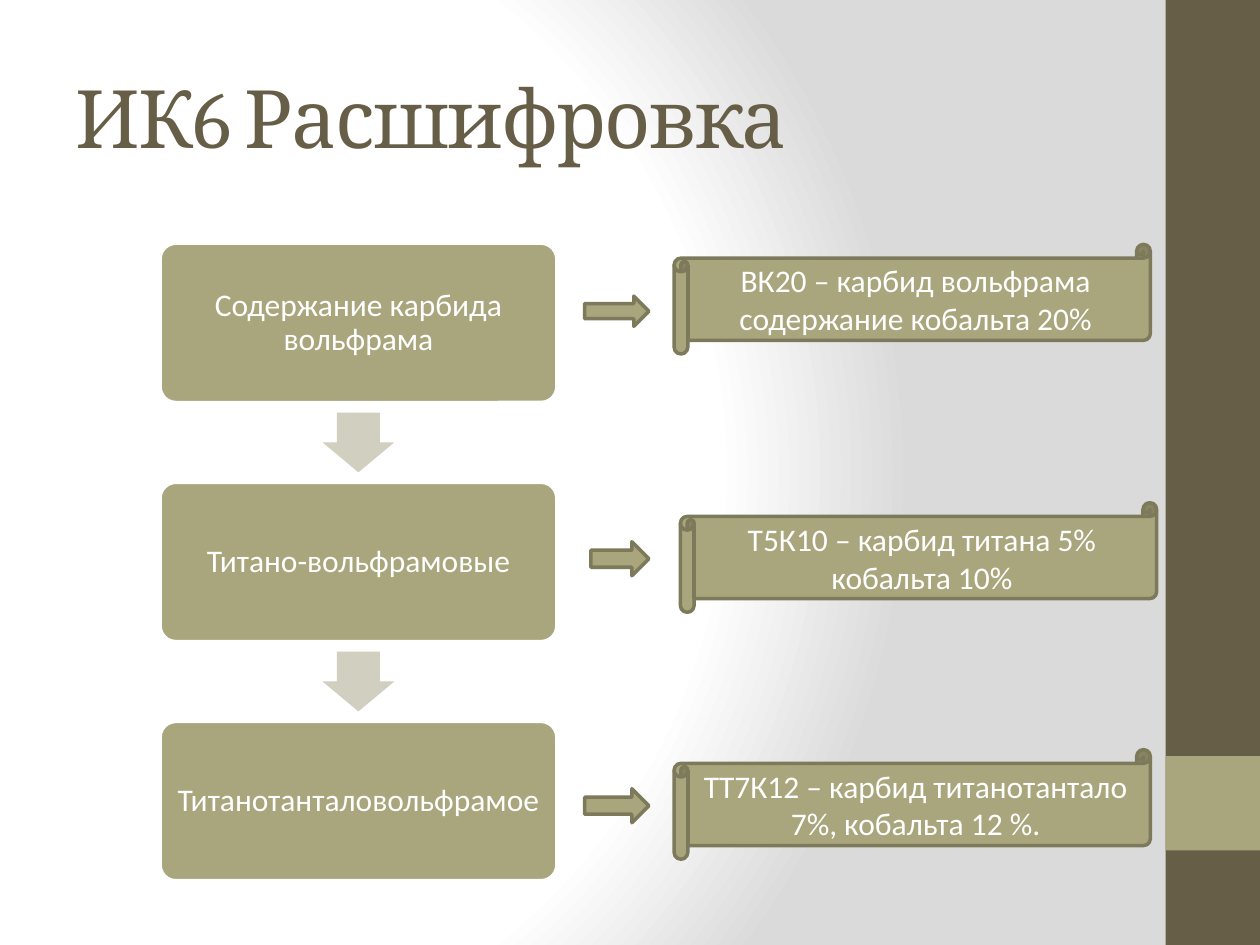
import pptx
import pptx.dml.color
import pptx.enum.shapes
import pptx.enum.text
import pptx.oxml
import pptx.oxml.ns
import pptx.util

Inches = pptx.util.Inches
Pt = pptx.util.Pt
SHAPE = pptx.enum.shapes.MSO_SHAPE
ALIGN = pptx.enum.text.PP_ALIGN
MIDDLE = pptx.enum.text.MSO_ANCHOR.MIDDLE

WIDTH, HEIGHT = 10, 7.5
COLORS = {
    "brown": "675E47", "olive": "A9A57C", "olive_edge": "7D7A5C",
    "pale": "D1CFBF", "white": "FFFFFF", "grey": "DADADA",
}
GRADES = ["Содержание карбида вольфрама", "Титано-вольфрамовые", "Титанотанталовольфрамое"]
# scroll text, scroll (left, top), arrow (left, top, width, height)
EXAMPLES = [
    ("ВК20 – карбид вольфрама содержание кобальта 20%", (5.35, 1.94), (4.64, 2.35, 0.51, 0.24)),
    ("Т5К10 – карбид титана 5% кобальта 10%", (5.4, 3.99), (4.69, 4.3, 0.46, 0.27)),
    ("ТТ7К12 – карбид титанотантало 7%, кобальта 12 %.", (5.35, 5.95), (4.64, 6.26, 0.51, 0.27)),
]


def rgb(name):
    return pptx.dml.color.RGBColor.from_string(COLORS[name])


def add_block(page, kind, box, fill, line=None):
    shape = page.shapes.add_shape(kind, *map(Inches, box))
    shape.shadow.inherit = False
    shape.fill.solid()
    shape.fill.fore_color.rgb = rgb(fill)
    if line:
        shape.line.color.rgb = rgb(line)
        shape.line.width = Pt(2)
    else:
        shape.line.fill.background()
    return shape


def add_run(para, text, font, size, color):
    span = para.add_run()
    span.text = text
    span.font.name = font
    span.font.size = Pt(size)
    span.font.color.rgb = rgb(color)
    return span


def write_label(shape, text):
    frame = shape.text_frame
    frame.word_wrap = True
    frame.vertical_anchor = MIDDLE
    para = frame.paragraphs[0]
    para.alignment = ALIGN.CENTER
    add_run(para, text, "Calibri", 18, "white")
    return frame


def paint_background(page):
    """Radial gradient, which python-pptx offers only through XML."""
    stops = [(0, "white"), (75, "white"), (100, "grey")]
    stop_xml = "".join(
        f'<a:gs pos="{share * 1000}"><a:srgbClr val="{COLORS[name]}"/></a:gs>'
        for share, name in stops)
    background = pptx.oxml.parse_xml(
        f'<p:bg {pptx.oxml.ns.nsdecls("p", "a")}><p:bgPr><a:gradFill rotWithShape="1">'
        f'<a:gsLst>{stop_xml}</a:gsLst><a:path path="circle">'
        '<a:fillToRect l="20000" t="50000" r="100000" b="50000"/></a:path>'
        '</a:gradFill><a:effectLst/></p:bgPr></p:bg>')
    page._element.cSld.insert(0, background)


def draw_sidebar(page, box):
    left, top, width, height = box
    add_block(page, SHAPE.RECTANGLE, box, "brown")
    add_block(page, SHAPE.RECTANGLE, (left, top + 0.8 * height, width, width), "olive")


def write_title(page, box, text):
    title = page.shapes.title
    title.left, title.top, title.width, title.height = map(Inches, box)
    title.text_frame.vertical_anchor = MIDDLE
    para = title.text_frame.paragraphs[0]
    para.alignment = ALIGN.LEFT
    span = add_run(para, text, "Cambria", 46, "brown")
    span.font._element.set("spc", "-100")


def draw_process(page, box, steps):
    """Equal boxes stacked in a column, with a down arrow in each gap."""
    left, top, width, height = box
    gap_share = 0.5
    step_height = height / (len(steps) + gap_share * (len(steps) - 1))
    gap = gap_share * step_height
    arrow_width, arrow_height = 0.9 * gap, 0.75 * gap
    for index, text in enumerate(steps):
        step_top = top + index * (step_height + gap)
        step = add_block(page, SHAPE.ROUNDED_RECTANGLE,
                         (left, step_top, width, step_height), "olive", "white")
        step.adjustments[0] = 0.1
        frame = write_label(step, text)
        frame.margin_left = frame.margin_right = Inches(0.07)
        frame.margin_top = frame.margin_bottom = Inches(0.07)
        frame.paragraphs[0].line_spacing = 0.9
        if index:
            arrow = add_block(page, SHAPE.DOWN_ARROW,
                              (left + (width - arrow_width) / 2,
                               step_top - (gap + arrow_height) / 2,
                               arrow_width, arrow_height), "pale")
            arrow.adjustments[0] = 0.6
            arrow.adjustments[1] = 0.5


def draw_example(page, scroll_box, arrow_box, text):
    scroll = add_block(page, SHAPE.HORIZONTAL_SCROLL, scroll_box, "olive", "olive_edge")
    write_label(scroll, text)
    add_block(page, SHAPE.RIGHT_ARROW, arrow_box, "olive", "olive_edge")


def main():
    deck = pptx.Presentation()
    deck.slide_width, deck.slide_height = Inches(WIDTH), Inches(HEIGHT)
    page = deck.slides.add_slide(deck.slide_layouts.get_by_name("Title Only"))
    paint_background(page)
    draw_sidebar(page, (0.925 * WIDTH, 0, 0.075 * WIDTH, HEIGHT))
    write_title(page, (0.5, 0.3, 8.33, 1.25), "ИК6 Расшифровка")
    draw_process(page, (1.27, 1.93, 3.15, 5.06), GRADES)
    for text, scroll_corner, arrow_box in EXAMPLES:
        draw_example(page, (*scroll_corner, 3.78, 0.87), arrow_box, text)
    deck.save("out.pptx")


if __name__ == "__main__":
    main()
